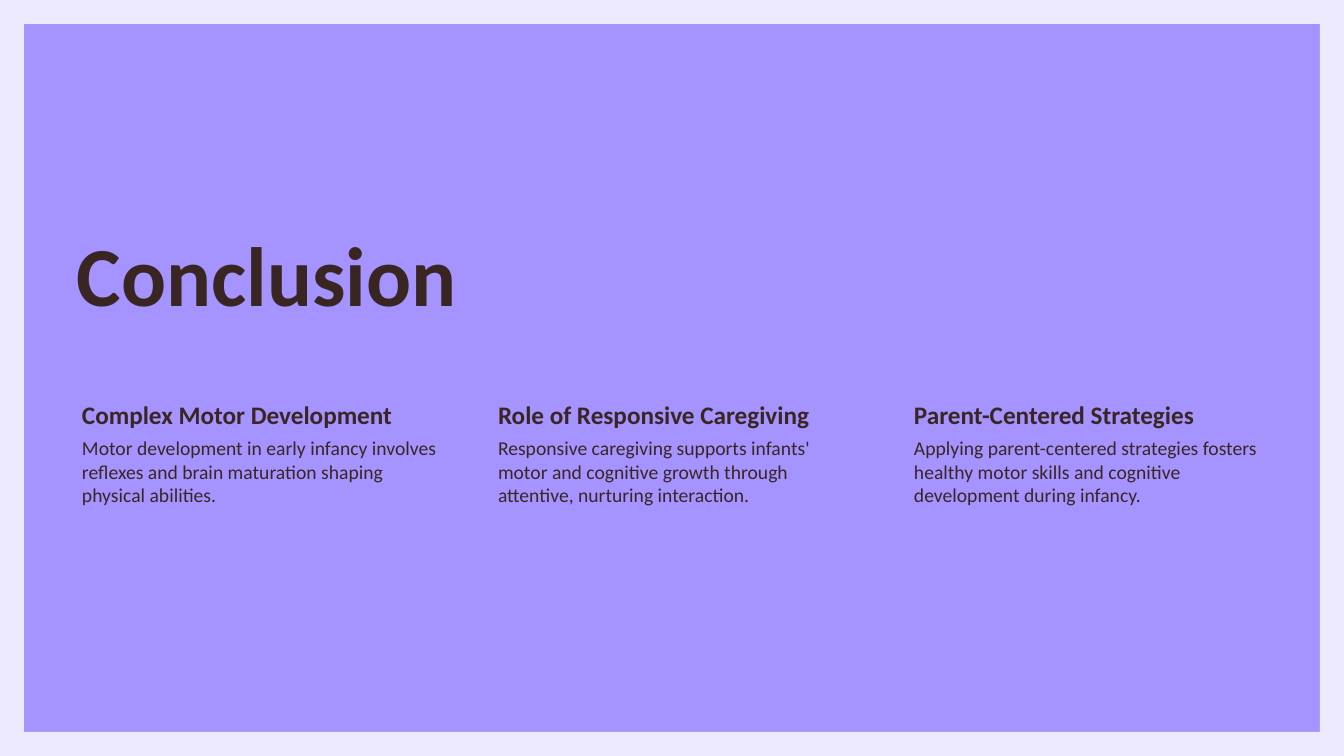
from pptx import Presentation
from pptx import util as u
from pptx.dml.color import RGBColor
from pptx.enum import shapes, text

TITLE = "Conclusion"
POINTS = [
    ("Complex Motor Development",
     "Motor development in early infancy involves reflexes and brain maturation shaping physical abilities."),
    ("Role of Responsive Caregiving",
     "Responsive caregiving supports infants' motor and cognitive growth through attentive, nurturing interaction."),
    ("Parent-Centered Strategies",
     "Applying parent-centered strategies fosters healthy motor skills and cognitive development during infancy."),
]

PURPLE = RGBColor(0xA5, 0x93, 0xFF)
LILAC = RGBColor(0xED, 0xE9, 0xFF)
BROWN = RGBColor(0x39, 0x26, 0x23)

W, H, BORDER = 1344, 756, 24
LEFT, COL_W, COL_STEP = 67, 378, 416
HEAD_TOP, HEAD_H = 396, 37
BODY_TOP, BODY_H = 434, 258
TITLE_FONT = {"size": u.Pt(60), "bold": True}
HEAD_FONT = {"size": u.Pt(18), "bold": True}
BODY_FONT = {"size": u.Pt(14), "bold": False}


def px(n):
    return u.Emu(round(n * 12192000 / W))


def set_all(obj, values):
    for name, value in values.items():
        setattr(obj, name, value)


def add_text(s, words, box, insets, font, anchor=text.MSO_ANCHOR.TOP, spacing=1.0):
    tf = s.shapes.add_textbox(*map(px, box)).text_frame
    sides = ("margin_left", "margin_top", "margin_right", "margin_bottom")
    set_all(tf, dict(zip(sides, map(px, insets))))
    set_all(tf, {"word_wrap": True, "vertical_anchor": anchor})
    p = tf.paragraphs[0]
    p.line_spacing = spacing
    r = p.add_run()
    r.text = words
    set_all(r.font, {"name": "Calibri", **font})
    r.font.color.rgb = BROWN


prs = Presentation()
set_all(prs, {"slide_width": px(W), "slide_height": px(H)})
s = prs.slides.add_slide(prs.slide_layouts[6])
s.background.fill.solid()
s.background.fill.fore_color.rgb = PURPLE

sp = s.shapes.add_shape(shapes.MSO_SHAPE.FRAME, 0, 0, px(W), px(H))
sp.adjustments[0] = BORDER / H
sp.shadow.inherit = False
sp.fill.solid()
sp.fill.fore_color.rgb = LILAC
sp.line.fill.background()

add_text(s, TITLE, (LEFT, 204, 809, 125), (10, 5, 10, 5), TITLE_FONT,
         text.MSO_ANCHOR.BOTTOM, 0.85)
for i, (head, body) in enumerate(POINTS):
    x = LEFT + i * COL_STEP
    add_text(s, head, (x, HEAD_TOP, COL_W, HEAD_H), (15, 3, 3, 3), HEAD_FONT)
    add_text(s, body, (x, BODY_TOP, COL_W, BODY_H), (15, 2, 2, 2), BODY_FONT)

prs.save("out.pptx")
